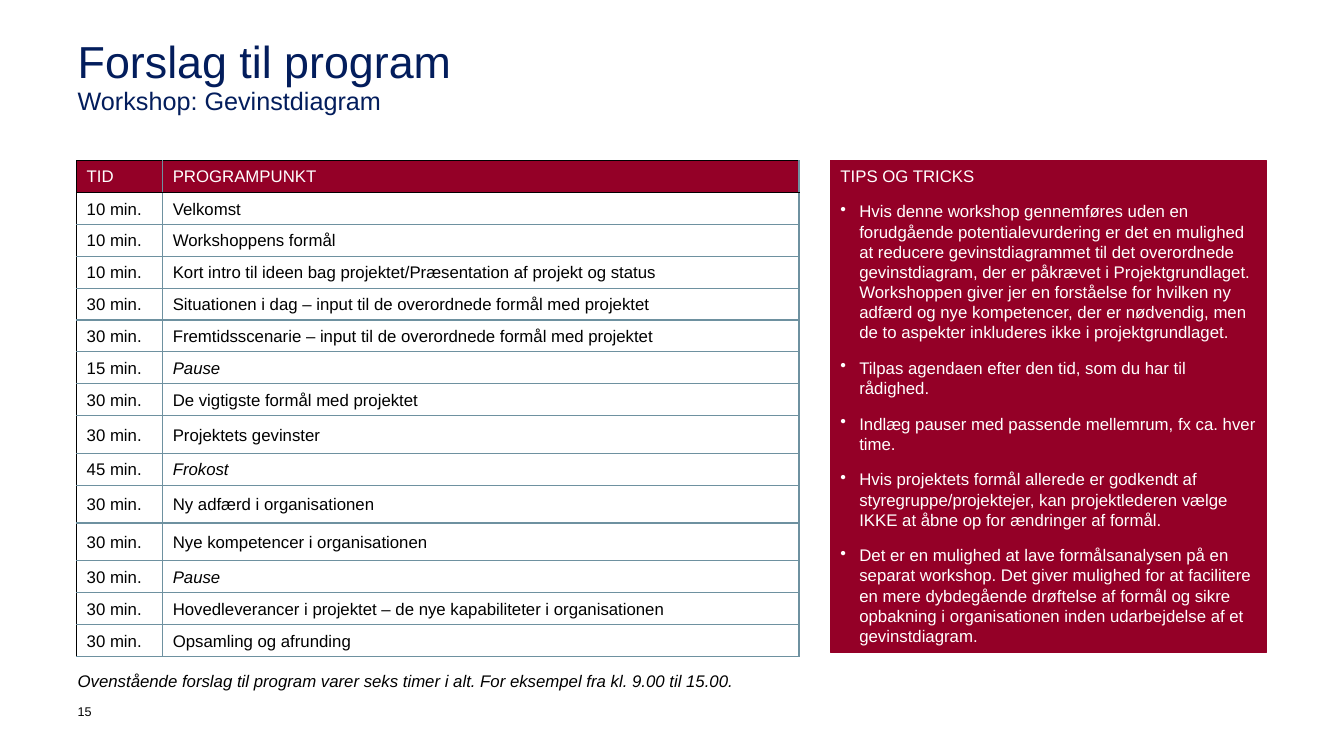
from dataclasses import dataclass

from lxml import etree
from pptx import Presentation
from pptx import util as u
from pptx.dml.color import RGBColor
from pptx.enum import shapes, text
from pptx.oxml.ns import qn

PX = 9525  # EMU per px, 96 px to the inch
FONT = "Arial"
NAVY, CRIMSON, SLATE = "031D5C", "940027", "6E91A0"
BLACK, WHITE = "000000", "FFFFFF"
ROW_H, TALL_ROW_H = 30, 36
COLUMN_WIDTHS = (82, 606)
TABLE_LEFT, CONTENT_TOP, CONTENT_H = 73, 153, 468
BULLET_INDENT = 18


@dataclass(frozen=True)
class Item:
    time: str
    topic: str
    height: int = ROW_H
    is_break: bool = False


@dataclass(frozen=True)
class Label:
    left: int
    top: int
    width: int
    height: int
    lines: tuple[tuple[str, int], ...]  # wording and size in points
    color: str = BLACK
    italic: bool = False
    spacing: float = 1.0


PROGRAM = (
    Item("10 min.", "Velkomst"),
    Item("10 min.", "Workshoppens formål"),
    Item("10 min.", "Kort intro til ideen bag projektet/Præsentation af projekt og status"),
    Item("30 min.", "Situationen i dag – input til de overordnede formål med projektet"),
    Item("30 min.", "Fremtidsscenarie – input til de overordnede formål med projektet"),
    Item("15 min.", "Pause", is_break=True),
    Item("30 min.", "De vigtigste formål med projektet"),
    Item("30 min.", "Projektets gevinster", TALL_ROW_H),
    Item("45 min.", "Frokost", is_break=True),
    Item("30 min.", "Ny adfærd i organisationen", TALL_ROW_H),
    Item("30 min.", "Nye kompetencer i organisationen", TALL_ROW_H),
    Item("30 min.", "Pause", is_break=True),
    Item("30 min.", "Hovedleverancer i projektet – de nye kapabiliteter i organisationen"),
    Item("30 min.", "Opsamling og afrunding"),
)

TIPS = (
    "Hvis denne workshop gennemføres uden en forudgående potentialevurdering er det en "
    "mulighed at reducere gevinstdiagrammet til det overordnede gevinstdiagram, der er "
    "påkrævet i Projektgrundlaget. Workshoppen giver jer en forståelse for hvilken ny "
    "adfærd og nye kompetencer, der er nødvendig, men de to aspekter inkluderes ikke i "
    "projektgrundlaget.",
    "Tilpas agendaen efter den tid, som du har til rådighed.",
    "Indlæg pauser med passende mellemrum, fx ca. hver time.",
    "Hvis projektets formål allerede er godkendt af styregruppe/projektejer, kan "
    "projektlederen vælge IKKE at åbne op for ændringer af formål.",
    "Det er en mulighed at lave formålsanalysen på en separat workshop. Det giver mulighed "
    "for at facilitere en mere dybdegående drøftelse af formål og sikre opbakning i "
    "organisationen inden udarbejdelse af et gevinstdiagram.",
)

LABELS = (
    Label(74, 38, 1133, 98, (("Forslag til program", 32), ("Workshop: Gevinstdiagram", 18)),
          NAVY, spacing=0.9),
    Label(74, 639, 642, 33, (("Ovenstående forslag til program varer seks timer i alt. "
                              "For eksempel fra kl. 9.00 til 15.00.", 12),), italic=True),
    Label(74, 670, 30, 37, (("15", 9),)),
)


def px(n: int) -> u.Emu:
    return u.Emu(n * PX)


def rgb(value: str) -> RGBColor:
    return RGBColor.from_string(value)


def set_font(p, size: int, color: str, italic: bool = False) -> None:
    p.font.name = FONT
    p.font.size = u.Pt(size)
    p.font.italic = italic
    p.font.color.rgb = rgb(color)


def set_borders(cell, **colors: str) -> None:
    """Draw 1 pt cell borders; keys L, R, T, B must come in that order."""
    tc_pr = cell._tc.get_or_add_tcPr()
    for i, (side, color) in enumerate(colors.items()):
        ln = etree.Element(qn(f"a:ln{side}"), w=str(u.Pt(1)))
        fill = etree.SubElement(ln, qn("a:solidFill"))
        etree.SubElement(fill, qn("a:srgbClr"), val=color)
        tc_pr.insert(i, ln)


def add_label(s, label: Label) -> None:
    box = s.shapes.add_textbox(px(label.left), px(label.top), px(label.width), px(label.height))
    tf = box.text_frame
    tf.word_wrap = True
    tf.margin_left = tf.margin_right = tf.margin_top = tf.margin_bottom = 0
    for i, (wording, size) in enumerate(label.lines):
        p = tf.add_paragraph() if i else tf.paragraphs[0]
        p.text = wording
        p.line_spacing = label.spacing
        set_font(p, size, label.color, label.italic)


def add_program(s) -> None:
    rows = (Item("TID", "PROGRAMPUNKT"), *PROGRAM)
    table = s.shapes.add_table(len(rows), len(COLUMN_WIDTHS), px(TABLE_LEFT), px(CONTENT_TOP),
                               px(sum(COLUMN_WIDTHS)), px(CONTENT_H)).table
    table.first_row = table.horz_banding = False
    for column, width in zip(table.columns, COLUMN_WIDTHS):
        column.width = px(width)
    for i, item in enumerate(rows):
        table.rows[i].height = px(item.height)
        header = i == 0
        for j, wording in enumerate((item.time, item.topic)):
            cell = table.cell(i, j)
            if header:
                cell.fill.solid()
                cell.fill.fore_color.rgb = rgb(CRIMSON)
            else:
                cell.fill.background()
                cell.vertical_anchor = text.MSO_ANCHOR.MIDDLE
            set_borders(cell, L=SLATE if j else BLACK, R=SLATE,
                        T=BLACK if i < 2 else SLATE, B=BLACK if header else SLATE)
            p = cell.text_frame.paragraphs[0]
            p.text = wording
            p.line_spacing = 1.08
            set_font(p, 12, WHITE if header else BLACK, item.is_break and j == 1)


def add_tips(s) -> None:
    sp = s.shapes.add_shape(shapes.MSO_SHAPE.RECTANGLE, px(791), px(CONTENT_TOP),
                            px(415), px(CONTENT_H))
    sp.shadow.inherit = False
    sp.fill.solid()
    sp.fill.fore_color.rgb = rgb(CRIMSON)
    sp.line.color.rgb = rgb(CRIMSON)
    sp.line.width = u.Pt(0.5)
    tf = sp.text_frame
    tf.word_wrap = True
    tf.vertical_anchor = text.MSO_ANCHOR.TOP
    for i, wording in enumerate(("TIPS OG TRICKS", *TIPS)):
        p = tf.add_paragraph() if i else tf.paragraphs[0]
        p.text = wording
        p.alignment = text.PP_ALIGN.LEFT
        if i:
            p_pr = p._p.get_or_add_pPr()
            p_pr.set("marL", str(px(BULLET_INDENT)))
            p_pr.set("indent", str(px(-BULLET_INDENT)))
            etree.SubElement(p_pr, qn("a:buChar"), char="•")
            p.space_before = u.Pt(11)
        set_font(p, 12, WHITE)


def main() -> None:
    prs = Presentation()
    prs.slide_width, prs.slide_height = px(1280), px(720)
    s = prs.slides.add_slide(prs.slide_layouts[6])
    for label in LABELS:
        add_label(s, label)
    add_program(s)
    add_tips(s)
    prs.save("out.pptx")


if __name__ == "__main__":
    main()
